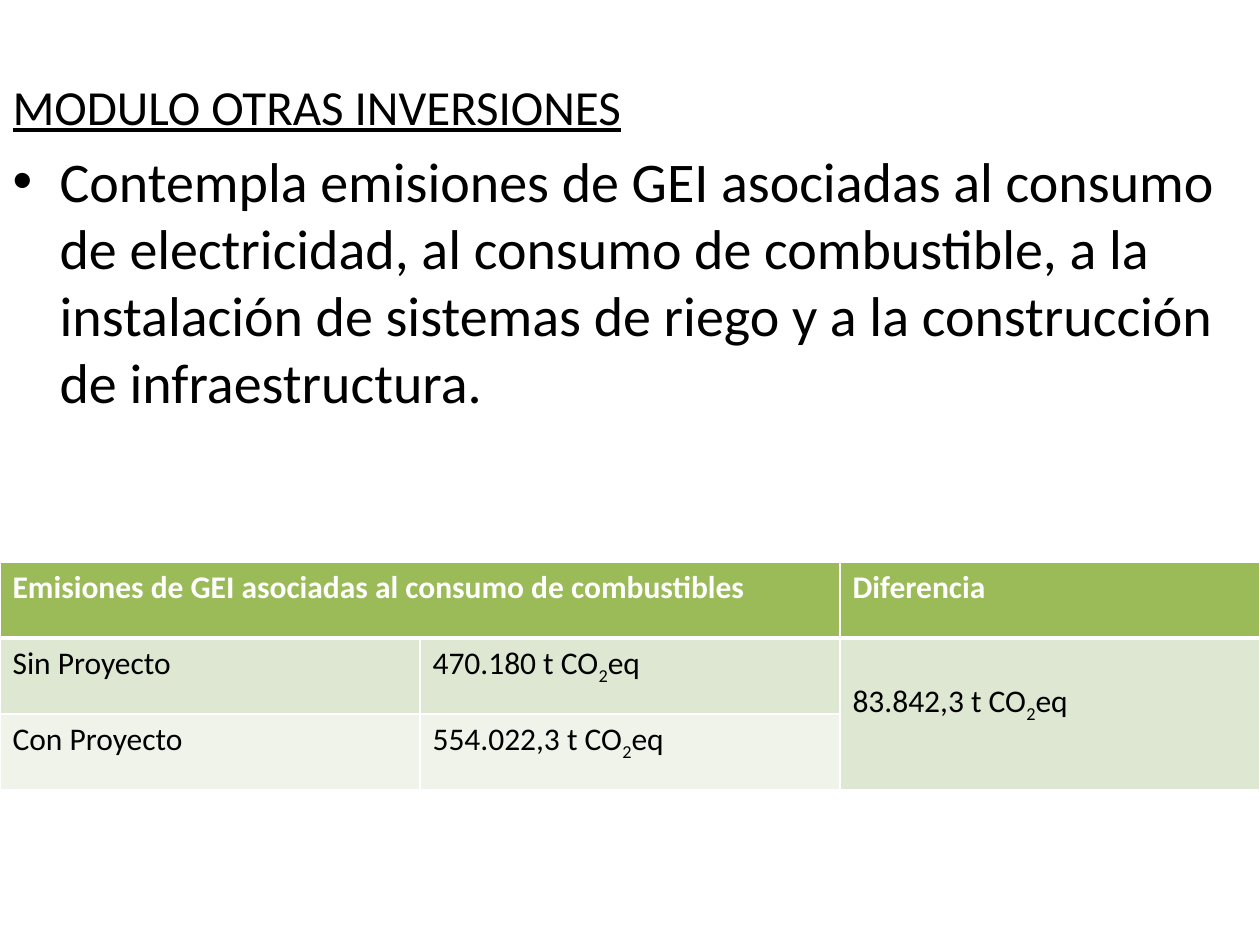
from lxml.etree import SubElement
from pptx import Presentation
from pptx.dml.color import RGBColor
from pptx.enum.text import MSO_ANCHOR as Anchor, MSO_AUTO_SIZE as AutoSize
from pptx.oxml.ns import qn
from pptx.util import Emu, Pt

PX_PER_INCH = 126
PAGE_WIDTH, PAGE_HEIGHT = 1260, 945
TABLE_TOP, ROW_HEIGHT = 562, 76
INDENT = 47
BLACK = RGBColor(0x00, 0x00, 0x00)
WHITE = RGBColor(0xFF, 0xFF, 0xFF)
GREEN = RGBColor(0x9B, 0xBB, 0x59)
LIGHT_GREEN = RGBColor(0xDE, 0xE7, 0xD1)
PALE_GREEN = RGBColor(0xEF, 0xF3, 0xEA)

HEADING = {"name": "Calibri", "size": Pt(28), "underline": True}
BULLET = {"name": "Calibri", "size": Pt(32), "underline": False}
HEADER_CELL = {"name": "Calibri", "size": Pt(18), "bold": True}
BODY_CELL = {"name": "Calibri", "size": Pt(18), "bold": False}

BODY_TEXT = (
    "Contempla emisiones de GEI asociadas al consumo de electricidad, "
    "al consumo de combustible, a la instalación de sistemas de riego "
    "y a la construcción de infraestructura."
)
UNIT = "t CO|2|eq"
ROWS = [
    ["Emisiones de GEI asociadas al consumo de combustibles", "", "Diferencia"],
    ["Sin Proyecto", f"470.180 {UNIT}", f"83.842,3 {UNIT}"],
    ["Con Proyecto", f"554.022,3 {UNIT}", ""],
]
ROW_FILLS = [GREEN, LIGHT_GREEN, PALE_GREEN]


def px(length):
    """Turn whole px into EMU."""
    return Emu(round(length * 914400 / PX_PER_INCH))


def add_span(para, text, style, color):
    """Add one formatted run to a paragraph."""
    span = para.add_run()
    span.text = text
    for name, value in style.items():
        setattr(span.font, name, value)
    span.font.color.rgb = color
    return span


def set_bullet(para, char, indent):
    """Give a paragraph a hanging bullet, or none if char is empty."""
    props = para._p.get_or_add_pPr()
    props.set("marL", str(px(indent)))
    props.set("indent", str(-px(indent)))
    if char:
        SubElement(props, qn("a:buChar"), char=char)
    else:
        SubElement(props, qn("a:buNone"))


def set_borders(cell, widths):
    """Draw white borders of the given point widths on a cell."""
    props = cell._tc.get_or_add_tcPr()
    for index, (side, width) in enumerate(widths.items()):
        line = SubElement(props, qn(f"a:ln{side}"), w=str(Pt(width)))
        fill = SubElement(line, qn("a:solidFill"))
        SubElement(fill, qn("a:srgbClr"), val=str(WHITE))
        props.insert(index, line)


def fill_body(page):
    """Write the heading and the bullet in the body placeholder."""
    box = page.placeholders[1]
    box.left, box.top = px(0), px(0)
    box.width, box.height = px(PAGE_WIDTH), px(PAGE_HEIGHT)
    frame = box.text_frame
    settings = {
        "word_wrap": True,
        "auto_size": AutoSize.NONE,
        "vertical_anchor": Anchor.TOP,
        "margin_top": px(76),
    }
    for name, value in settings.items():
        setattr(frame, name, value)
    heading, bullet = frame.paragraphs[0], frame.add_paragraph()
    heading.space_before, bullet.space_before = Pt(0), Pt(6.4)
    set_bullet(heading, "", 0)
    set_bullet(bullet, "•", INDENT)
    add_span(heading, "MODULO OTRAS INVERSIONES", HEADING, BLACK)
    add_span(bullet, BODY_TEXT, BULLET, BLACK)


def fill_cell(cell, text, style, color):
    """Write cell text, lowering the parts between bars."""
    para = cell.text_frame.paragraphs[0]
    for index, part in enumerate(text.split("|")):
        if part:
            span = add_span(para, part, style, color)
            if index % 2:
                span._r.get_or_add_rPr().set("baseline", "-25000")


def add_emissions_table(page):
    """Add the table of fuel emissions and their difference."""
    frame = page.shapes.add_table(
        len(ROWS), len(ROWS[0]), px(0), px(TABLE_TOP),
        px(PAGE_WIDTH), px(ROW_HEIGHT * len(ROWS)),
    )
    table = frame.table
    for row, texts in enumerate(ROWS):
        table.rows[row].height = px(ROW_HEIGHT)
        style, color = (BODY_CELL, BLACK) if row else (HEADER_CELL, WHITE)
        for column, text in enumerate(texts):
            cell = table.cell(row, column)
            cell.fill.solid()
            cell.fill.fore_color.rgb = ROW_FILLS[row]
            top, bottom = 3 if row == 1 else 1, 3 if row == 0 else 1
            set_borders(cell, {"L": 1, "R": 1, "T": top, "B": bottom})
            fill_cell(cell, text, style, color)
    table.cell(0, 0).merge(table.cell(0, 1))
    difference = table.cell(1, 2)
    difference.merge(table.cell(2, 2))
    difference.margin_top = px(45)


def main():
    """Build the slide and save it."""
    deck = Presentation()
    deck.slide_width, deck.slide_height = px(PAGE_WIDTH), px(PAGE_HEIGHT)
    page = deck.slides.add_slide(deck.slide_layouts[1])
    title = page.shapes.title.element
    title.getparent().remove(title)
    fill_body(page)
    add_emissions_table(page)
    deck.save("out.pptx")


if __name__ == "__main__":
    main()
